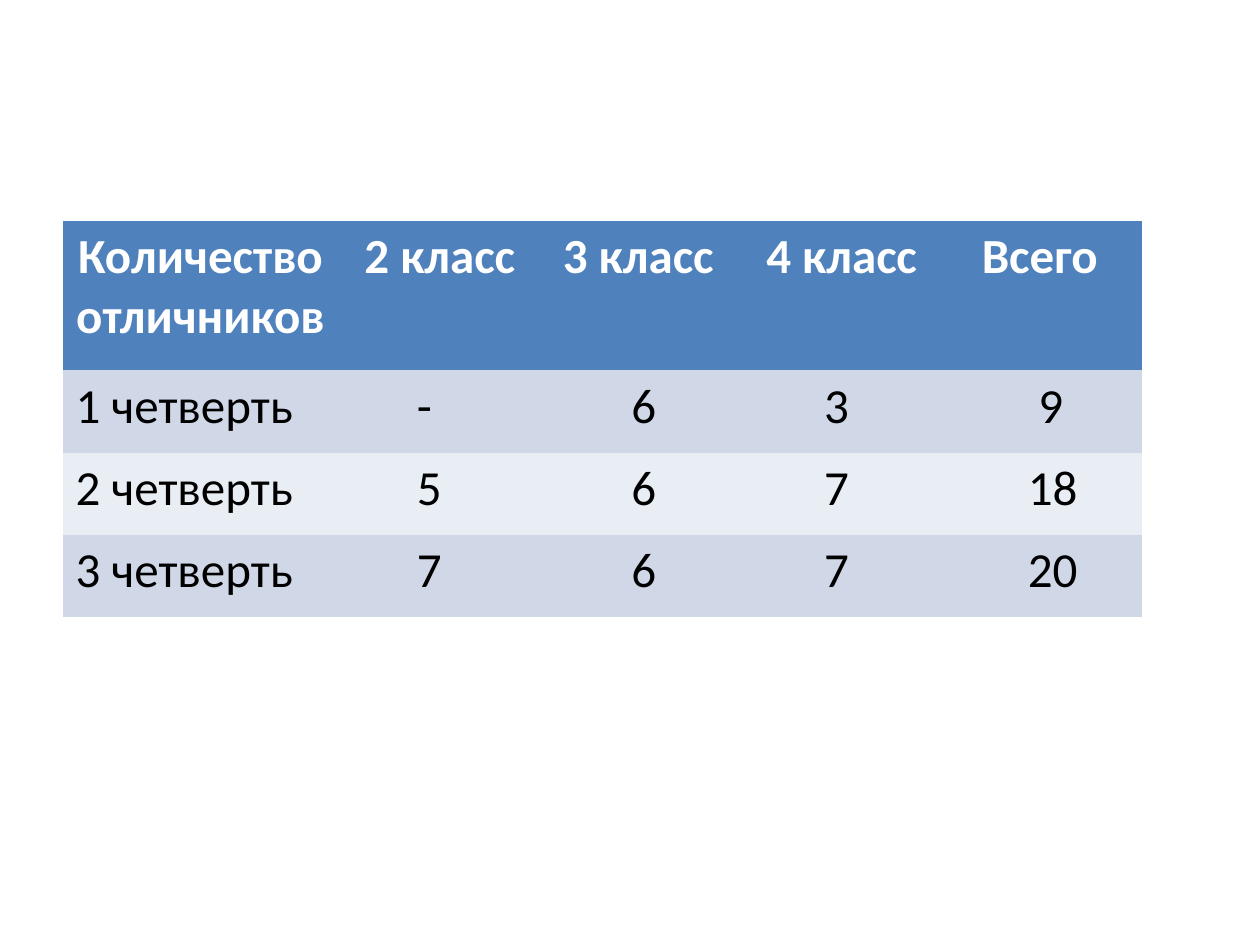
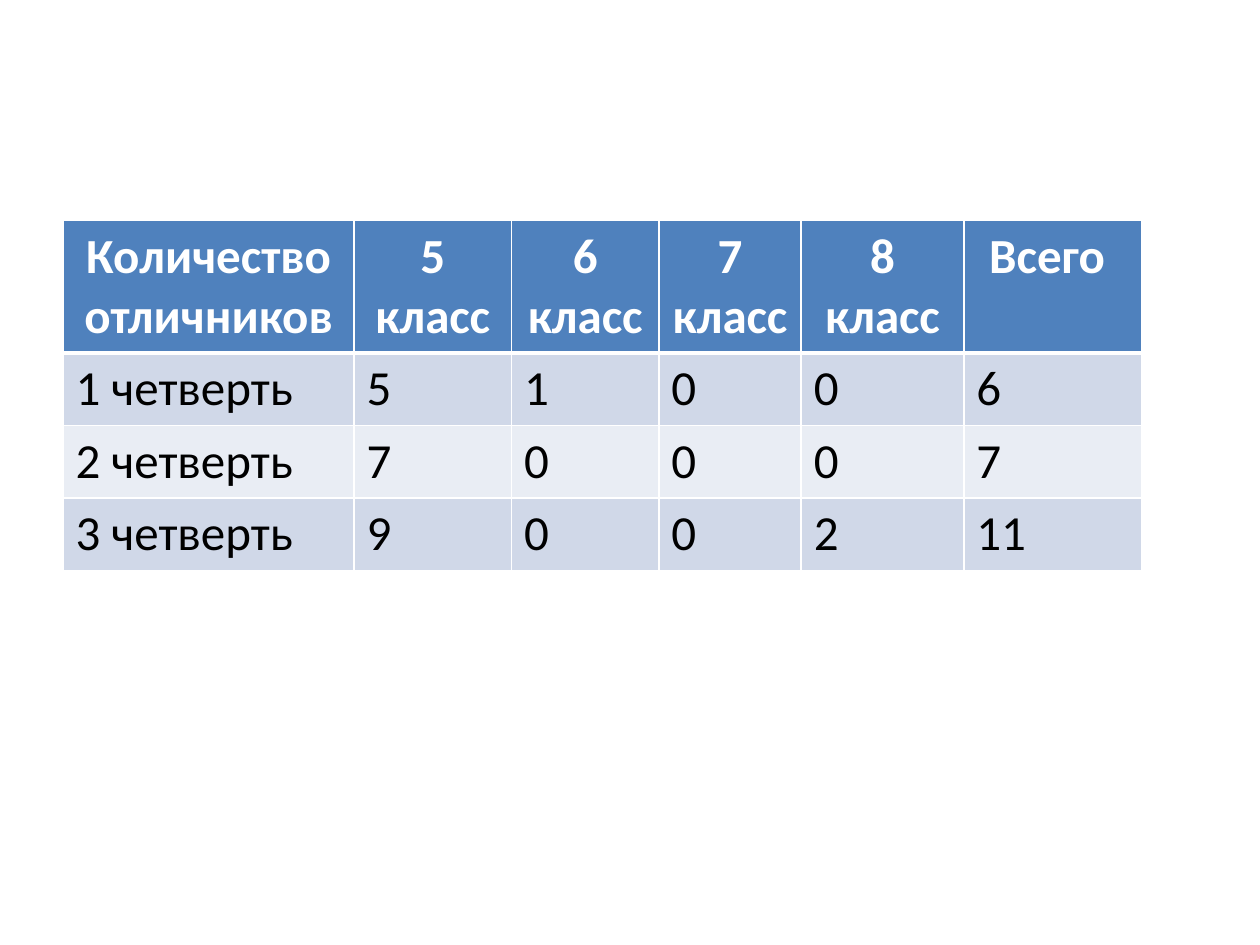
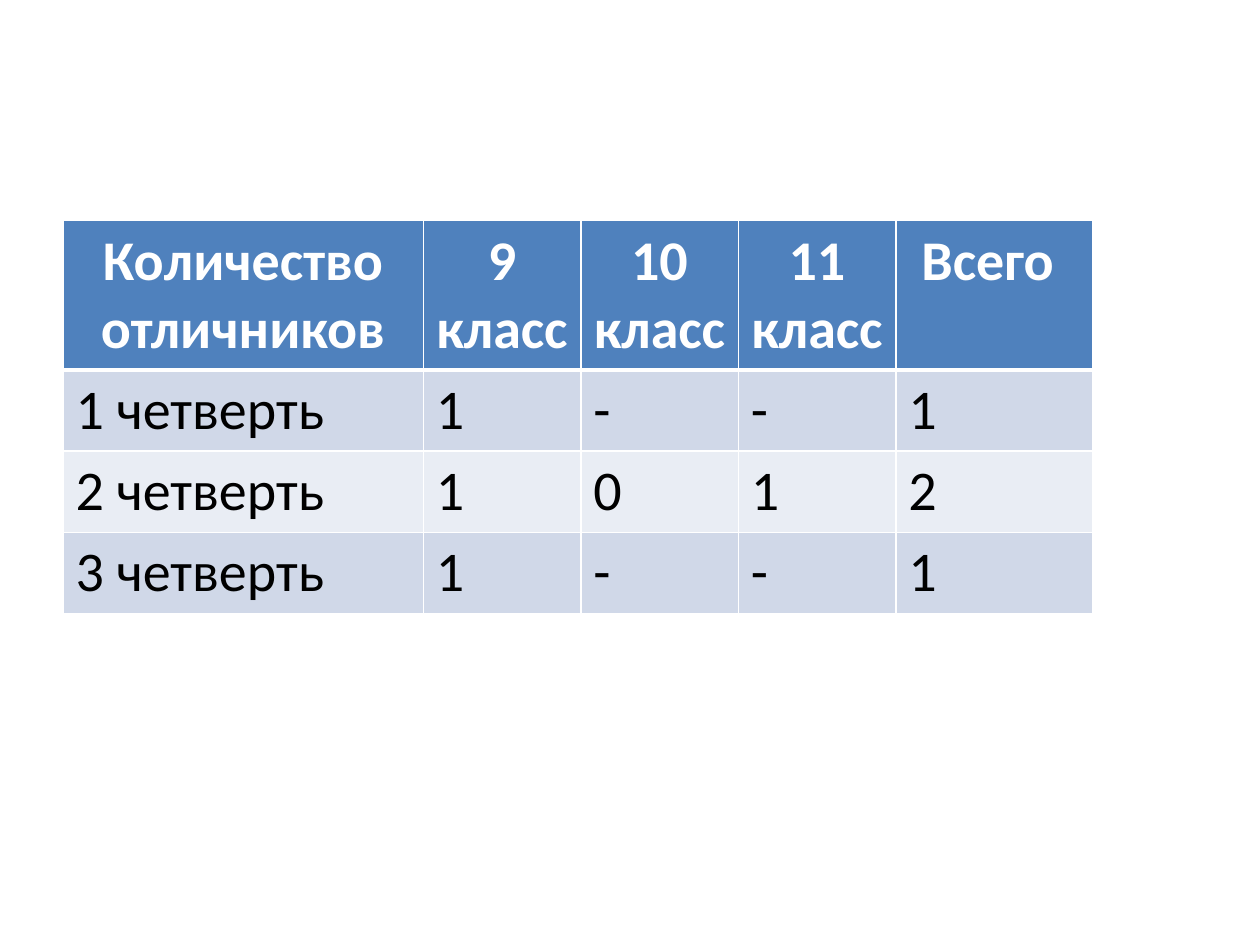
import pptx
import pptx.dml.color
import pptx.enum.text
import pptx.oxml.ns
import pptx.util
from lxml import etree

Pt = pptx.util.Pt

# Content: honours pupils per term, one table a slide
HEADING = "Количество отличников"
TOTAL = "Всего "
TERMS = ["1 четверть", "2 четверть", "3 четверть"]

TABLES = [
    dict(grades=["2 класс", "3 класс", "4 класс"],
         counts=[["-", "6", "3", "9"],
                 ["5", "6", "7", "18"],
                 ["7", "6", "7", "20"]],
         indents=[[38, 44, 44, 44], [38, 44, 44, 38], [38, 44, 44, 38]],
         widths=[157, 116.6, 110.2, 122.4, 110.2],
         heights=[85.7, 46.9, 46.9, 46.9],
         height=226.8, size=28, ruled=False),
    dict(grades=["5 класс", "6 класс", "7 класс", "8 класс"],
         counts=[["5", "1", "0", "0", "6"],
                 ["7", "0", "0", "0", "7"],
                 ["9", "0", "0", "2", "11"]],
         widths=[166.3, 90, 84.2, 81.4, 92.9, 101.5],
         heights=[29.5] * 4,
         height=196.6, size=28, ruled=True),
    dict(grades=["9 класс", "10 класс", "11 класс"],
         counts=[["1", "-", "-", "1"],
                 ["1", "0", "1", "2"],
                 ["1", "-", "-", "1"]],
         widths=[205.9, 90, 90, 90, 112.3],
         heights=[29.5] * 4,
         height=221, size=32, ruled=True),
]

# Shared look
FONT = "Calibri"
WHITE, BLACK, HEADER_BLUE = "FFFFFF", "000000", "4F81BD"
BANDS = ["D0D8E8", "E9EDF4"]
LEFT, TOP = 36, 126
CELL_MARGIN = 7.2
THIN, THICK = 1, 3
NO_STYLE = "{2D5ABB26-0587-4C30-8999-92F81FD0307C}"


def color(code):
    return pptx.dml.color.RGBColor.from_string(code)


def rule_cell(cell, row):
    """Draw white borders, thick between the header and the first term."""
    qn = pptx.oxml.ns.qn
    weights = dict(lnL=THIN, lnR=THIN,
                   lnT=THICK if row == 1 else THIN,
                   lnB=THICK if row == 0 else THIN)
    properties = cell._tc.get_or_add_tcPr()
    for side, weight in weights.items():
        border = etree.SubElement(properties, qn("a:" + side), w=str(Pt(weight)))
        fill = etree.SubElement(border, qn("a:solidFill"))
        etree.SubElement(fill, qn("a:srgbClr"), val=WHITE)


def fill_cell(cell, row, text, size, indent, ruled):
    header = row == 0
    if ruled:
        rule_cell(cell, row)
    cell.fill.solid()
    cell.fill.fore_color.rgb = color(HEADER_BLUE if header else BANDS[(row - 1) % 2])
    cell.margin_left = Pt(CELL_MARGIN + indent)
    cell.text = text
    paragraph = cell.text_frame.paragraphs[0]
    if header:
        paragraph.alignment = pptx.enum.text.PP_ALIGN.CENTER
    paragraph.font.name = FONT
    paragraph.font.size = Pt(size)
    paragraph.font.bold = header
    paragraph.font.color.rgb = color(WHITE if header else BLACK)


def add_honours_table(slide, grades, counts, widths, heights, height, size,
                      ruled, indents=None):
    rows = [[HEADING, *grades, TOTAL]]
    rows += [[term, *values] for term, values in zip(TERMS, counts)]
    frame = slide.shapes.add_table(len(rows), len(widths), Pt(LEFT), Pt(TOP),
                                   Pt(sum(widths)), Pt(height))
    table = frame.table
    table.first_row = table.horz_banding = False
    table._tbl.tblPr.find(pptx.oxml.ns.qn("a:tableStyleId")).text = NO_STYLE

    for column, width in zip(table.columns, widths):
        column.width = Pt(width)
    for row, row_height in zip(table.rows, heights):
        row.height = Pt(row_height)
    frame.height = Pt(height)

    for r, texts in enumerate(rows):
        for c, text in enumerate(texts):
            indent = indents[r - 1][c - 1] if indents and r and c else 0
            fill_cell(table.cell(r, c), r, text, size, indent, ruled)


def main():
    deck = pptx.Presentation()
    deck.slide_width, deck.slide_height = Pt(720), Pt(540)
    blank = deck.slide_layouts[6]
    for content in TABLES:
        add_honours_table(deck.slides.add_slide(blank), **content)
    deck.save("out.pptx")


if __name__ == "__main__":
    main()
